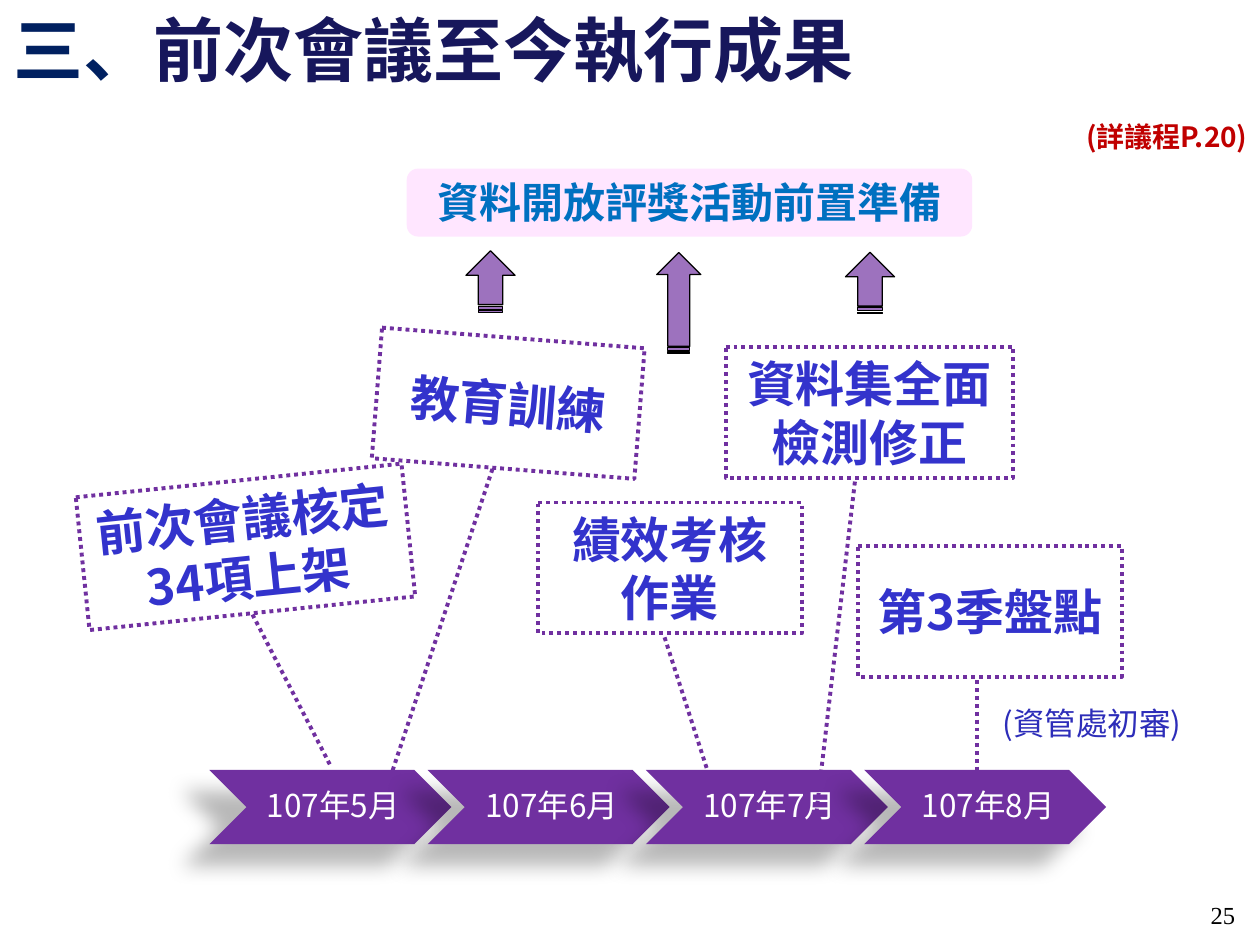
"""Build the progress slide: a month timeline with callouts leading to award preparation."""
from typing import NamedTuple, Optional

from lxml import etree
from pptx import Presentation
from pptx import util as u
from pptx.dml.color import RGBColor
from pptx.enum import dml, shapes, text
from pptx.oxml import ns

NAVY = RGBColor(0x00, 0x20, 0x60)
INK = RGBColor(0x17, 0x17, 0x5C)
PURPLE = RGBColor(0x70, 0x30, 0xA0)
BLUE = RGBColor(0x33, 0x33, 0xCC)
INDIGO = RGBColor(0x2D, 0x2D, 0xB9)
SKY = RGBColor(0x00, 0x70, 0xC0)
RED = RGBColor(0xC0, 0x00, 0x00)
PINK = RGBColor(0xFF, 0xCC, 0xFF)
WHITE = RGBColor(0xFF, 0xFF, 0xFF)
BLACK = RGBColor(0x00, 0x00, 0x00)
SANS = "Noto Sans CJK SC"
SERIF = "Times New Roman"
KIND = shapes.MSO_SHAPE
ALIGN = text.PP_ALIGN
ANCHOR = text.MSO_ANCHOR


class Box(NamedTuple):
    left: float
    top: float
    width: float
    height: float


class Style(NamedTuple):
    size: int
    color: RGBColor
    bold: bool = False
    font: str = SANS


class Label(NamedTuple):
    words: str
    box: Box
    style: Style
    align: ALIGN


class Callout(NamedTuple):
    words: str
    box: Box
    leader: tuple[float, float, float, float]
    turn: float = 0


TASK = Style(28, BLUE, True)
MONTH = Style(18, WHITE)
MONTHS = ("107年5月", "107年6月", "107年7月", "107年8月")
STEP = 4.4
LABELS = (
    Label("25", Box(23.19, 18.01, 1.96, 0.61), Style(14, BLACK, font=SERIF), ALIGN.RIGHT),
    Label("(詳議程P.20)", Box(20.7, 2.29, 4.7, 1.17), Style(16, RED, True), ALIGN.RIGHT),
    Label("(資管處初審)", Box(19.96, 14.07, 4.75, 1.02), Style(18, INDIGO), ALIGN.LEFT),
)
CALLOUTS = (
    Callout("前次會議核定34項上架", Box(1.65, 9.68, 6.6, 2.69), (1.01, 0.5, 2.2, 0.69), 354.1),
    Callout("第3季盤點", Box(17.3, 11, 5.31, 2.64), (1.03, 0.45, 1.73, 0.45)),
    Callout("績效考核作業", Box(10.85, 10.13, 5.31, 2.64), (1.03, 0.48, 2.03, 0.64)),
    Callout("教育訓練", Box(7.59, 6.81, 5.31, 2.64), (1.01, 0.46, 3.38, 0.17), 4.5),
    Callout("資料集全面檢測修正", Box(14.63, 6.99, 5.79, 2.64), (1.03, 0.45, 3.67, 0.31)),
)
ARROWS = (
    Box(16.92, 5.21, 1.24, 0.99),
    Box(12.67, 5.66, 2.03, 0.89),
    Box(9.27, 5.18, 1.24, 0.99),
)


def place(box: Box) -> list[u.Cm]:
    return [u.Cm(side) for side in box]


def paint(run, style: Style) -> None:
    font = run.font
    font.size, font.bold, font.name = u.Pt(style.size), style.bold, style.font
    font.color.rgb = style.color
    east = etree.SubElement(run._r.get_or_add_rPr(), ns.qn("a:ea"))
    east.set("typeface", style.font)


def write(shape, words: str, style: Style, align: ALIGN, anchor: ANCHOR = ANCHOR.TOP) -> None:
    frame = shape.text_frame
    frame.text = words
    frame.word_wrap, frame.vertical_anchor = True, anchor
    para = frame.paragraphs[0]
    para.alignment = align
    paint(para.runs[0], style)


def form(tree, kind: KIND, box: Box, fill: RGBColor, alpha: Optional[int] = None):
    shape = tree.add_shape(kind, *place(box))
    shape.shadow.inherit = False
    shape.fill.solid()
    shape.fill.fore_color.rgb = fill
    if alpha is not None:
        tint = shape._element.spPr.find(".//" + ns.qn("a:srgbClr"))
        etree.SubElement(tint, ns.qn("a:alpha")).set("val", str(alpha * 1000))
    shape.line.fill.background()
    return shape


def edge(shape, color: RGBColor, width: float) -> None:
    shape.line.color.rgb = color
    shape.line.width = u.Pt(width)


def shade(shape) -> None:
    effect = shape._element.spPr.find(ns.qn("a:effectLst"))
    cast = etree.SubElement(effect, ns.qn("a:outerShdw"), blurRad=str(u.Pt(11.8)),
                            dist=str(u.Pt(19.7)), dir=str(141 * 60000),
                            algn="ctr", rotWithShape="0")
    tint = etree.SubElement(cast, ns.qn("a:srgbClr"), val=str(BLACK))
    etree.SubElement(tint, ns.qn("a:alpha"), val="28000")


def add_label(tree, label: Label):
    shape = tree.add_textbox(*place(label.box))
    write(shape, label.words, label.style, label.align)
    return shape


def add_month(tree, index: int, words: str) -> None:
    group = tree.add_group_shape().shapes
    left = 4.22 + index * STEP
    shade(form(group, KIND.CHEVRON, Box(left, 15.52, 4.88, 1.5), PURPLE))
    shape = group.add_textbox(*place(Box(left + 0.75, 15.52, 3.38, 1.5)))
    write(shape, words, MONTH, ALIGN.CENTER, ANCHOR.MIDDLE)
    frame = shape.text_frame
    frame.margin_left = u.Cm(0.2)
    frame.margin_top = frame.margin_right = frame.margin_bottom = u.Cm(0.08)
    frame.paragraphs[0].line_spacing = 0.9


def add_callout(tree, item: Callout) -> None:
    shape = form(tree, KIND.LINE_CALLOUT_1, item.box, WHITE)
    for index, value in enumerate(item.leader):
        shape.adjustments[index] = value
    shape.rotation = item.turn
    edge(shape, PURPLE, 2.25)
    shape.line.dash_style = dml.MSO_LINE.ROUND_DOT
    write(shape, item.words, TASK, ALIGN.CENTER, ANCHOR.MIDDLE)


def add_arrow(tree, box: Box) -> None:
    shape = form(tree, KIND.STRIPED_RIGHT_ARROW, box, PURPLE, 68)
    shape.rotation = 270
    edge(shape, BLACK, 0.75)


def main() -> None:
    deck = Presentation()
    deck.slide_width, deck.slide_height = u.Cm(25.4), u.Cm(19.05)
    tree = deck.slides.add_slide(deck.slide_layouts[6]).shapes
    title = add_label(tree, Label("三、", Box(0.03, 0, 25.37, 3.18),
                                  Style(40, NAVY, True), ALIGN.LEFT))
    run = title.text_frame.paragraphs[0].add_run()
    run.text = "前次會議至今執行成果"
    paint(run, Style(40, INK, True))
    for index, words in enumerate(MONTHS):
        add_month(tree, index, words)
    for item in CALLOUTS:
        add_callout(tree, item)
    for box in ARROWS:
        add_arrow(tree, box)
    banner = form(tree, KIND.ROUNDED_RECTANGLE, Box(8.2, 3.4, 11.4, 1.37), PINK, 49)
    write(banner, "資料開放評獎活動前置準備", Style(24, SKY, True), ALIGN.CENTER, ANCHOR.BOTTOM)
    for label in LABELS:
        add_label(tree, label)
    deck.save("out.pptx")


if __name__ == "__main__":
    main()
